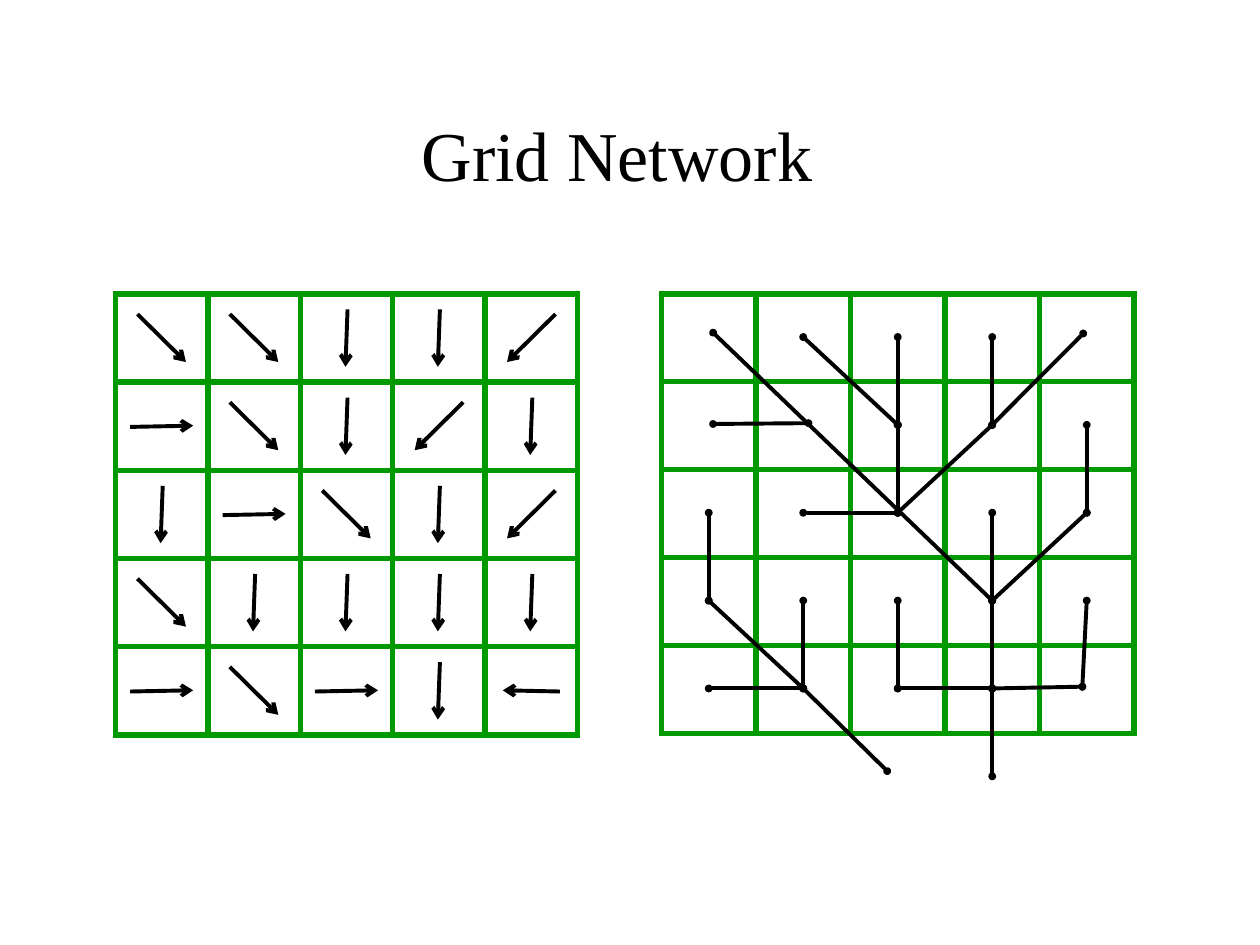
from dataclasses import dataclass
from itertools import product

from lxml.etree import SubElement
from pptx import Presentation
from pptx.dml.color import RGBColor
from pptx.enum.shapes import MSO_CONNECTOR, MSO_SHAPE
from pptx.enum.text import MSO_AUTO_SIZE
from pptx.oxml.ns import qn
from pptx.util import Pt


@dataclass(frozen=True)
class Theme:
    ink: RGBColor = RGBColor(0x00, 0x00, 0x00)
    grid: RGBColor = RGBColor(0x00, 0x99, 0x00)
    font: str = "Times New Roman"
    title_size: float = 40
    grid_width: float = 3
    line_width: float = 2.25


@dataclass(frozen=True)
class Grid:
    left: float
    top: float
    cell_width: float
    cell_height: float
    count: int = 5

    def cells(self):
        return product(range(self.count), repeat=2)

    def corner(self, row, column):
        return self.left + column * self.cell_width, self.top + row * self.cell_height

    def center(self, row, column):
        return self.corner(row + 0.5, column + 0.5)


@dataclass(frozen=True)
class Direction:
    row_step: int
    column_step: int
    across: float  # width of the drawn arrow, signed
    down: float  # height of the drawn arrow, signed


# Each cell drains into the neighbour its arrow points to
DIRECTIONS = {
    "→": Direction(0, 1, 36, -0.7),
    "←": Direction(0, -1, -32.6, -0.7),
    "↓": Direction(1, 0, -1.2, 32.8),
    "↘": Direction(1, 1, 27.7, 27.4),
    "↙": Direction(1, -1, -27.7, 27.4),
}
FLOW_MAP = [
    "↘↘↓↓↙",
    "→↘↓↙↓",
    "↓→↘↓↙",
    "↘↓↓↓↓",
    "→↘→↓←",
]
FLOW_GRID = Grid(66, 168, 52.8, 50.4)
NETWORK_GRID = Grid(378, 168, 54, 50.2)

# The main diagonal is one long link, which also serves the cells it crosses
LONG_LINK_STEPS = {(0, 0): 3}
CROSSED_CELLS = {(1, 1), (2, 2)}

# Nodes that sit visibly off the centre of their cell: across, down
NODE_SHIFTS = {
    (0, 0): (2.5, -3),
    (0, 4): (-2, -2.5),
    (1, 0): (2.5, -1),
    (1, 1): (3, -1.5),
    (4, 4): (-2.5, -1.5),
    (5, 2): (-6, -3.5),
}


def node_position(cell):
    x, y = NETWORK_GRID.center(*cell)
    shift_x, shift_y = NODE_SHIFTS.get(cell, (0, -0.5))
    return x + shift_x, y + shift_y


class SlideBuilder:
    def __init__(self, slide, theme):
        self.slide = slide
        self.theme = theme

    def title(self, text, left, top, width, height):
        shape = self.slide.shapes.add_textbox(Pt(left), Pt(top), Pt(width), Pt(height))
        text_frame = shape.text_frame
        text_frame.text = text
        text_frame.word_wrap = False
        text_frame.auto_size = MSO_AUTO_SIZE.SHAPE_TO_FIT_TEXT
        font = text_frame.paragraphs[0].runs[0].font
        font.name = self.theme.font
        font.size = Pt(self.theme.title_size)
        font.color.rgb = self.theme.ink

    def grid(self, grid):
        """Draw the outlined cells and return their group."""
        group = self.slide.shapes.add_group_shape()
        for row, column in grid.cells():
            left, top = grid.corner(row, column)
            cell = group.shapes.add_shape(
                MSO_SHAPE.RECTANGLE, Pt(left), Pt(top),
                Pt(grid.cell_width), Pt(grid.cell_height))
            cell.shadow.inherit = False
            cell.fill.background()
            cell.line.color.rgb = self.theme.grid
            cell.line.width = Pt(self.theme.grid_width)
            SubElement(cell.line._get_or_add_ln(), qn("a:miter"), lim="800000")
        return group

    def line(self, group, start, end):
        """Draw a plain line and return its outline element."""
        connector = group.shapes.add_connector(
            MSO_CONNECTOR.STRAIGHT, *(Pt(value) for value in (*start, *end)))
        connector.line.color.rgb = self.theme.ink
        connector.line.width = Pt(self.theme.line_width)
        SubElement(connector._element.spPr, qn("a:effectLst"))
        return connector.line._get_or_add_ln()

    def arrow(self, group, center, direction):
        x, y = center
        half_x, half_y = direction.across / 2, direction.down / 2
        outline = self.line(group, (x - half_x, y - half_y), (x + half_x, y + half_y))
        SubElement(outline, qn("a:tailEnd"), type="arrow")

    def link(self, group, start, end):
        outline = self.line(group, start, end)
        for name in ("a:headEnd", "a:tailEnd"):
            SubElement(outline, qn(name), type="oval", w="sm", len="sm")


def main():
    presentation = Presentation()
    presentation.slide_width = Pt(720)
    presentation.slide_height = Pt(540)
    slide = presentation.slides.add_slide(presentation.slide_layouts[6])
    builder = SlideBuilder(slide, Theme())

    # Network on the right: link every cell to the one it drains into
    network = builder.grid(NETWORK_GRID)
    for row, column in NETWORK_GRID.cells():
        if (row, column) in CROSSED_CELLS:
            continue
        direction = DIRECTIONS[FLOW_MAP[row][column]]
        steps = LONG_LINK_STEPS.get((row, column), 1)
        target = (row + steps * direction.row_step, column + steps * direction.column_step)
        builder.link(network, node_position((row, column)), node_position(target))

    # Title
    builder.title("Grid Network", 234, 60, 237.6, 55.4)

    # Flow directions on the left: one centred arrow per cell
    flow = builder.grid(FLOW_GRID)
    for row, column in FLOW_GRID.cells():
        direction = DIRECTIONS[FLOW_MAP[row][column]]
        builder.arrow(flow, FLOW_GRID.center(row, column), direction)

    presentation.save("out.pptx")


if __name__ == "__main__":
    main()
